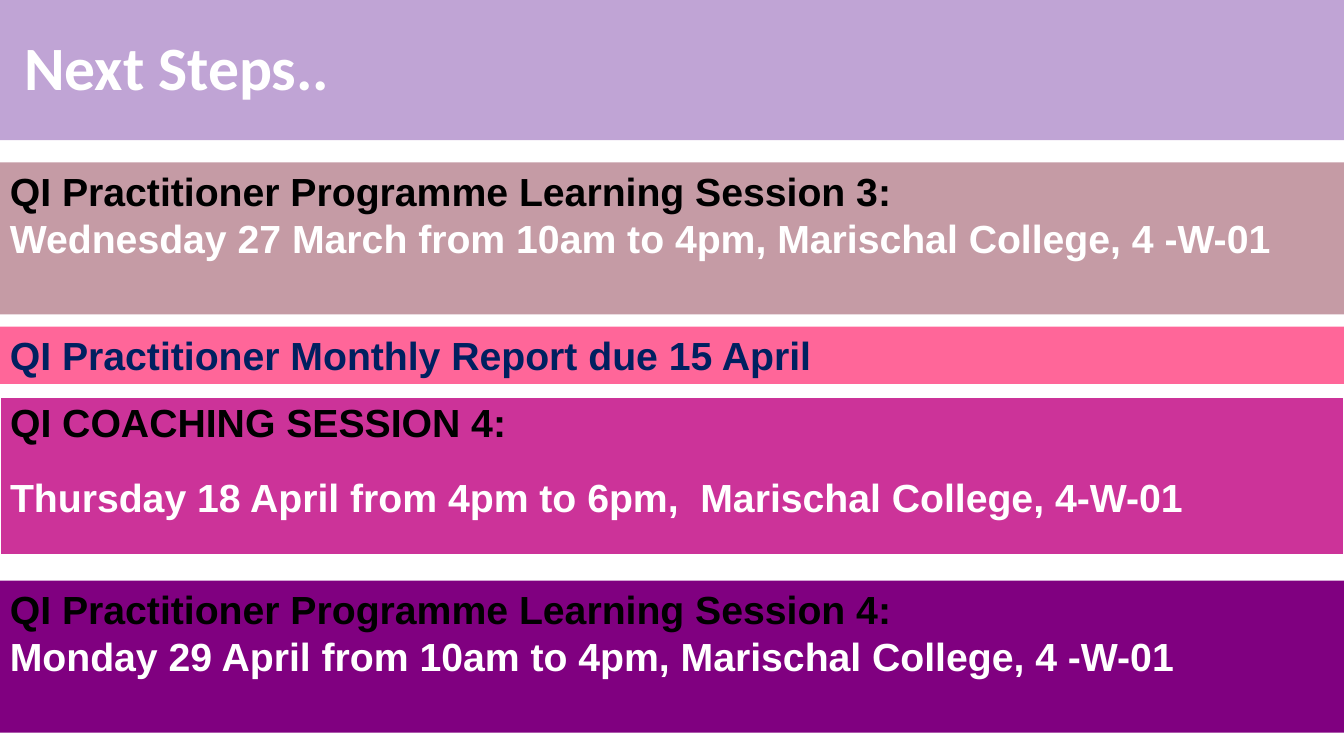
"""Build the Next Steps slide of coming programme dates."""
from lxml import etree
from pptx import Presentation
from pptx.dml.color import RGBColor
from pptx.enum.text import MSO_ANCHOR, PP_ALIGN
from pptx.oxml.ns import qn
from pptx.util import Inches, Pt

LEFT = PP_ALIGN.LEFT
TOP, MIDDLE = MSO_ANCHOR.TOP, MSO_ANCHOR.MIDDLE

WIDTH, HEIGHT = 13.33, 7.5
BLACK, WHITE, NAVY = "000000", "FFFFFF", "002060"
TITLE = {"text": "Next Steps..", "height": 1.39, "fill": "7030A0", "opacity": 44}
BANDS = [
    {"top": 1.61, "height": 1.51, "fill": "C59BA5", "lines": [
        ("QI Practitioner Programme Learning Session 3:", BLACK),
        ("Wednesday 27 March from 10am to 4pm, Marischal College, 4 -W-01", WHITE)]},
    {"top": 3.24, "height": 0.57, "fill": "FF6699", "lines": [
        ("QI Practitioner Monthly Report due 15 April", NAVY)]},
    {"top": 5.76, "height": 1.51, "fill": "800080", "lines": [
        ("QI Practitioner Programme Learning Session 4:", BLACK),
        ("Monday 29 April from 10am to 4pm, Marischal College, 4 -W-01", WHITE)]},
]
COACHING = {"top": 3.94, "height": 1.57, "fill": "CC3399", "gap": 22, "lines": [
    ("QI COACHING SESSION 4:", BLACK),
    ("Thursday 18 April from 4pm to 6pm,  Marischal College, 4-W-01", WHITE)]}
BORDERS = {"a:lnL": 1, "a:lnR": 1, "a:lnT": 1, "a:lnB": 3}


def color(value):
    return RGBColor.from_string(value)


def paint(target, value):
    target.fill.solid()
    target.fill.fore_color.rgb = color(value)


def write(para, text, hue, size=28, font="Arial", before=0):
    para.alignment = LEFT
    para.space_before = Pt(before)
    span = para.add_run()
    span.text = text
    span.font.name, span.font.size, span.font.bold = font, Pt(size), True
    span.font.color.rgb = color(hue)


def write_lines(frame, lines, gap=0):
    frame.word_wrap = True
    for index, (text, hue) in enumerate(lines):
        para = frame.add_paragraph() if index else frame.paragraphs[0]
        write(para, text, hue, before=gap if index else 0)


def add_title(page):
    title = page.shapes.title
    title.left, title.top = 0, 0
    title.width, title.height = Inches(WIDTH), Inches(TITLE["height"])
    paint(title, TITLE["fill"])
    shade = title.fill._xPr.find(qn("a:solidFill"))[0]
    etree.SubElement(shade, qn("a:alpha"), val=str(TITLE["opacity"] * 1000))
    frame = title.text_frame
    frame.vertical_anchor = MIDDLE
    frame.margin_left = Inches(0.24)
    para = frame.paragraphs[0]
    para.line_spacing = 0.9
    write(para, TITLE["text"], WHITE, size=44, font="Calibri")


def add_band(page, band):
    box = page.shapes.add_textbox(
        0, Inches(band["top"]), Inches(WIDTH), Inches(band["height"]))
    paint(box, band["fill"])
    box.text_frame.vertical_anchor = TOP
    write_lines(box.text_frame, band["lines"])


def add_coaching_table(page):
    table = page.shapes.add_table(
        1, 1, 0, Inches(COACHING["top"]), Inches(WIDTH), Inches(COACHING["height"])).table
    cell = table.cell(0, 0)
    properties = cell._tc.get_or_add_tcPr()
    for tag, points in BORDERS.items():
        line = etree.SubElement(properties, qn(tag), w=str(Pt(points)))
        solid = etree.SubElement(line, qn("a:solidFill"))
        etree.SubElement(solid, qn("a:srgbClr"), val=WHITE)
    paint(cell, COACHING["fill"])
    write_lines(cell.text_frame, COACHING["lines"], COACHING["gap"])


def main():
    deck = Presentation()
    deck.slide_width, deck.slide_height = Inches(WIDTH), Inches(HEIGHT)
    page = deck.slides.add_slide(deck.slide_layouts[5])
    add_title(page)
    add_coaching_table(page)
    for band in BANDS:
        add_band(page, band)
    deck.save("out.pptx")


if __name__ == "__main__":
    main()
